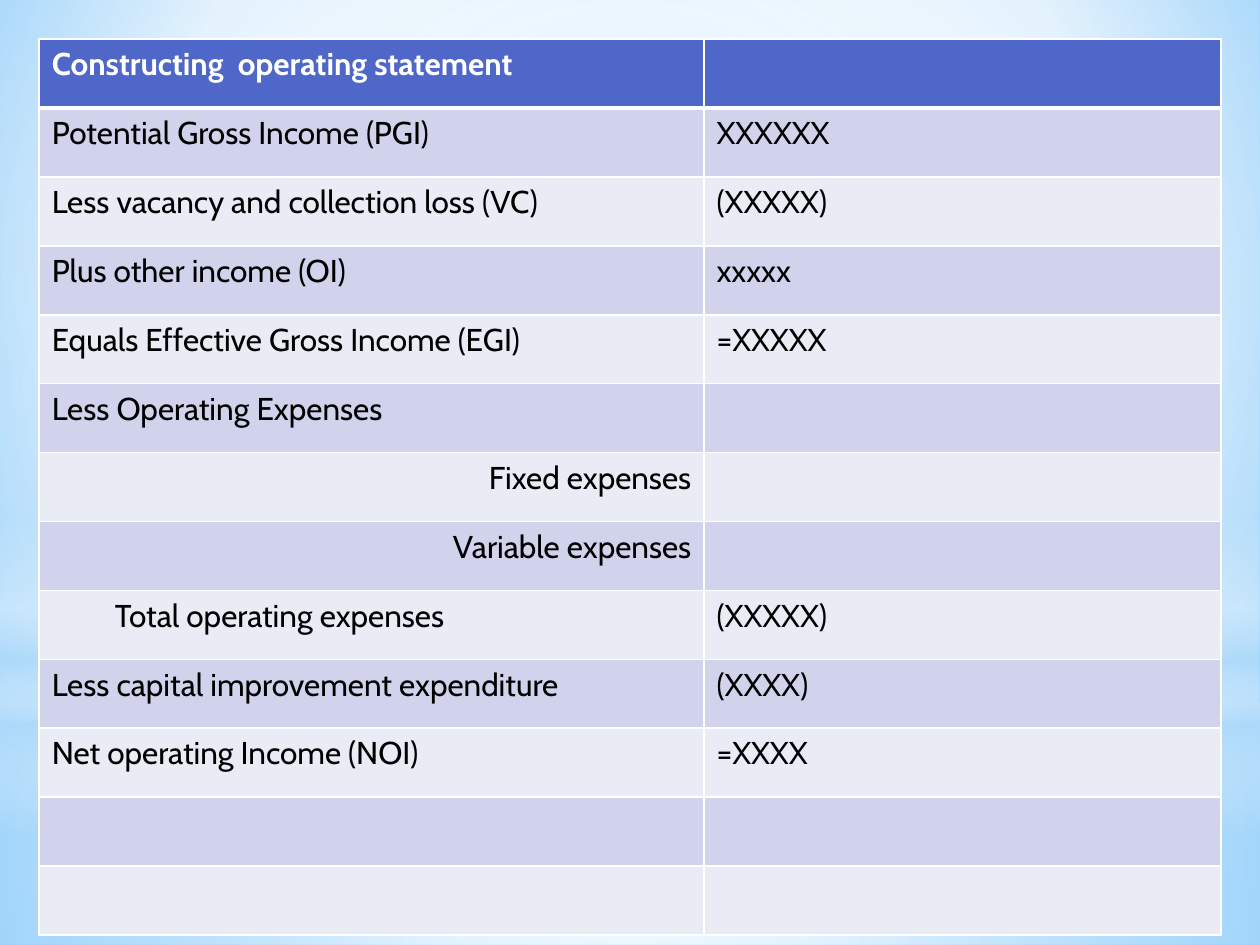
from lxml.etree import SubElement
from pptx import Presentation
from pptx.dml.color import RGBColor
from pptx.enum.shapes import MSO_SHAPE as Preset
from pptx.enum.text import PP_ALIGN as Align
from pptx.oxml import parse_xml
from pptx.oxml.ns import nsdecls, qn
from pptx.util import Cm, Pt

SKY = "B4DCFA"
WHITE = "FFFFFF"


def colour(value):
    return RGBColor.from_string(value)


def gradient(stops, focus=None):
    fill = parse_xml(f'<a:gradFill {nsdecls("a")} rotWithShape="1"/>')
    stop_list = SubElement(fill, qn("a:gsLst"))
    for position, value, opacity in stops:
        stop = SubElement(stop_list, qn("a:gs"), pos=str(position * 1000))
        tint = SubElement(stop, qn("a:srgbClr"), val=value)
        if opacity < 100:
            SubElement(tint, qn("a:alpha"), val=str(opacity * 1000))
    if focus:
        circle = SubElement(fill, qn("a:path"), path="circle")
        edges = {side: str(inset * 1000) for side, inset in zip("ltrb", focus)}
        SubElement(circle, qn("a:fillToRect"), edges)
    else:
        SubElement(fill, qn("a:lin"), ang="5400000", scaled="0")
    return fill


class StatementSlide:
    font = "Cabin"
    size = 18
    header = "4E67C8"
    bands = ("E9EBF5", "D0D3EB")
    centre = (50, 50, 50, 50)

    def __init__(self, deck):
        self.slide = deck.slides.add_slide(deck.slide_layouts[6])

    def backdrop(self, stops, focus):
        self.slide.background.fill.solid()
        properties = self.slide.element.find(".//" + qn("p:bgPr"))
        properties.replace(properties[0], gradient(stops, focus))

    def glow(self, preset, top, height, stops, focus=None):
        haze = self.slide.shapes.add_shape(preset, 0, Cm(top), Cm(25.4), Cm(height))
        haze.shadow.inherit = False
        haze.line.fill.background()
        haze.fill.solid()
        properties = haze.element.spPr
        properties.replace(properties.find(qn("a:solidFill")), gradient(stops, focus))

    def borders(self, cell, top, bottom):
        properties = cell._tc.get_or_add_tcPr()
        widths = {"L": 1, "R": 1, "T": top, "B": bottom}
        for place, (side, width) in enumerate(widths.items()):
            properties.insert(place, parse_xml(
                f'<a:ln{side} {nsdecls("a")} w="{Pt(width)}"><a:solidFill>'
                f'<a:srgbClr val="{WHITE}"/></a:solidFill></a:ln{side}>'))

    def cell(self, cell, text, row, align=None, indent=0):
        is_header = row == 0
        cell.fill.solid()
        cell.fill.fore_color.rgb = colour(self.header if is_header else self.bands[row % 2])
        self.borders(cell, 3 if row == 1 else 1, 3 if is_header else 1)
        cell.text = text
        paragraph = cell.text_frame.paragraphs[0]
        paragraph.font.name = self.font
        paragraph.font.size = Pt(self.size)
        paragraph.font.bold = is_header
        paragraph.font.color.rgb = colour(WHITE if is_header else "000000")
        if align:
            paragraph.alignment = align
        if indent:
            paragraph.level = 1
            paragraph._p.get_or_add_pPr().set("marL", str(Cm(indent)))

    def table(self, left, top, widths, row_height, lines):
        table = self.slide.shapes.add_table(
            len(lines), len(widths), Cm(left), Cm(top),
            Cm(sum(widths)), Cm(row_height * len(lines))).table
        for column, width in zip(table.columns, widths):
            column.width = Cm(width)
        for row, (item, amount, *layout) in enumerate(lines):
            table.rows[row].height = Cm(row_height)
            self.cell(table.cell(row, 0), item, row, *layout)
            self.cell(table.cell(row, 1), amount, row)


STATEMENT = [
    ("Constructing  operating statement", ""),
    ("Potential Gross Income (PGI)", "XXXXXX"),
    ("Less vacancy and collection loss (VC)", "(XXXXX)"),
    ("Plus other income (OI)", "xxxxx"),
    ("Equals Effective Gross Income (EGI)", "=XXXXX"),
    ("Less Operating Expenses", ""),
    ("Fixed expenses", "", Align.RIGHT),
    ("Variable expenses", "", Align.RIGHT),
    ("Total operating expenses", "(XXXXX)", None, 1.27),
    ("Less capital improvement expenditure", "(XXXX)"),
    ("Net operating Income (NOI)", "=XXXX"),
    ("", ""),
    ("", ""),
]


def main():
    deck = Presentation()
    deck.slide_width, deck.slide_height = Cm(25.4), Cm(19.05)
    page = StatementSlide(deck)
    page.backdrop([(0, "9ED5FF", 100), (60, WHITE, 100), (100, "5BB9FF", 100)],
                  (20, 10, 20, 60))
    page.glow(Preset.RECTANGLE, 14.17, 4.88,
              [(0, WHITE, 91), (37, WHITE, 76), (100, SKY, 79)], page.centre)
    page.glow(Preset.RECTANGLE, 0, 14.17,
              [(0, WHITE, 89), (48, WHITE, 62), (100, SKY, 79)], page.centre)
    page.glow(Preset.RECTANGLE, 10.46, 6.35,
              [(0, WHITE, 0), (29, WHITE, 30), (45, SKY, 40),
               (55, WHITE, 26), (65, SKY, 60), (100, WHITE, 0)])
    page.glow(Preset.OVAL, 4.45, 14.17, [(0, WHITE, 100), (56, WHITE, 0)], page.centre)
    page.table(0.79, 0.79, (13.4, 10.42), 1.39, STATEMENT)
    deck.save("out.pptx")


if __name__ == "__main__":
    main()
